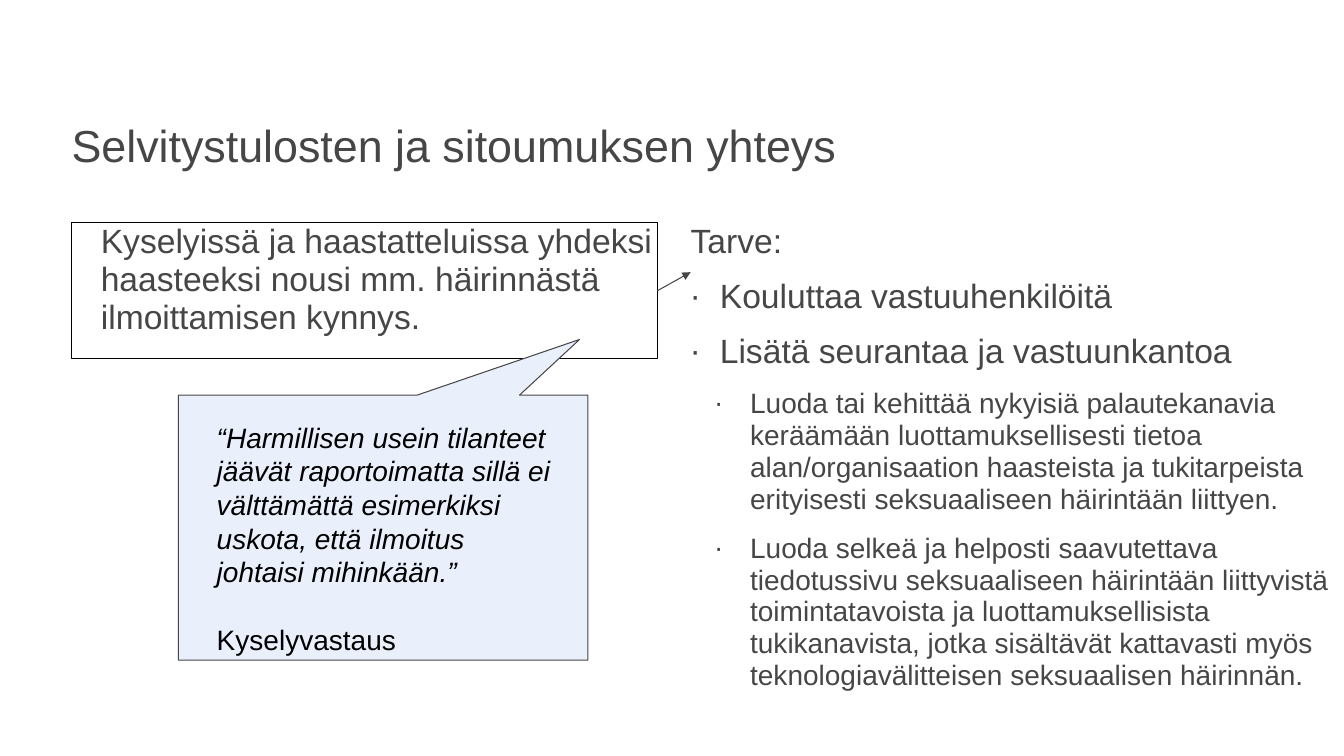
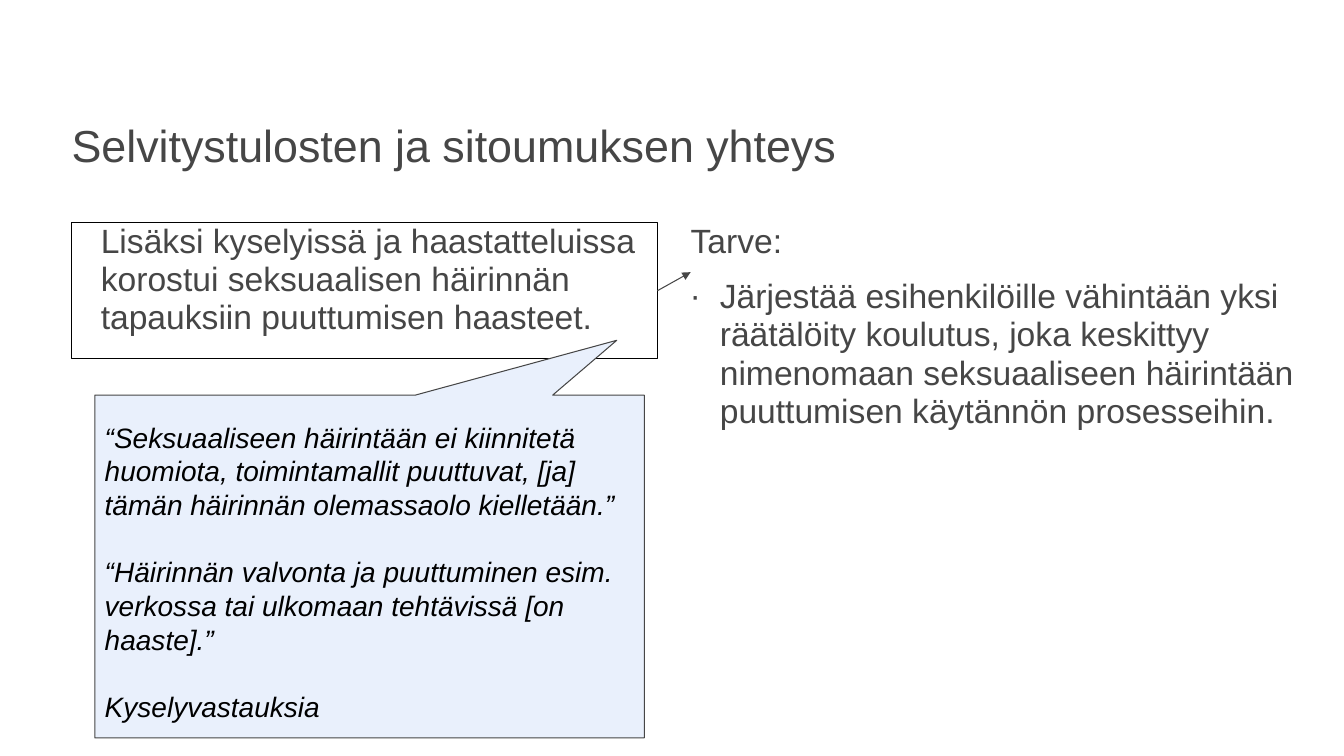
from lxml.etree import SubElement
from pptx import Presentation
from pptx.dml.color import RGBColor
from pptx.enum.shapes import MSO_CONNECTOR, MSO_SHAPE
from pptx.enum.text import MSO_ANCHOR, MSO_AUTO_SIZE, PP_ALIGN
from pptx.oxml.ns import qn
from pptx.util import Inches, Pt

FONT = "Arial"
GREY, BLACK, PALE_BLUE = "464646", "000000", "E9F0FC"
TITLE = "Selvitystulosten ja sitoumuksen yhteys"
CONTENT_TOP = 2.21
CALLOUT_TOP = 3.92


def color(hex_code):
    """Turn a hex string into a colour."""
    return RGBColor.from_string(hex_code)


def inches(*lengths):
    """Turn several numbers into lengths in inches."""
    return [Inches(length) for length in lengths]


def set_frame(frame, insets=(0, 0, 0, 0), anchor=MSO_ANCHOR.TOP):
    """Set wrapping, insets (left, top, right, bottom) and anchor."""
    frame.word_wrap = True
    frame.auto_size = MSO_AUTO_SIZE.NONE
    frame.vertical_anchor = anchor
    (frame.margin_left, frame.margin_top,
     frame.margin_right, frame.margin_bottom) = inches(*insets)


def add_bullet(properties):
    """Give paragraph properties a small dot bullet."""
    bullet_color = SubElement(properties, qn("a:buClr"))
    SubElement(bullet_color, qn("a:srgbClr"), val=GREY)
    SubElement(properties, qn("a:buFont"), typeface=FONT)
    SubElement(properties, qn("a:buChar"), char="∙")


def write_paragraph(frame, text, size=24, ink=GREY, italic=False, spacing=1.0,
                    before=0, left=0, hanging=0, level=0, bullet=False):
    """Write text into the empty first paragraph or a new one."""
    first = not frame.text
    paragraph = frame.paragraphs[0] if first else frame.add_paragraph()
    paragraph.alignment = PP_ALIGN.LEFT
    paragraph.level = level
    paragraph.line_spacing = spacing
    paragraph.space_before = Pt(0 if first else before)
    properties = paragraph._p.get_or_add_pPr()
    properties.set("marL", str(Inches(left)))
    properties.set("indent", str(-Inches(hanging)))
    if bullet:
        add_bullet(properties)
    run = paragraph.add_run()
    run.text = text
    run.font.name = FONT
    run.font.size = Pt(size)
    run.font.italic = italic
    run.font.color.rgb = color(ink)


def style_outline(line, ink):
    """Draw a thin line in the given colour."""
    line.color.rgb = color(ink)
    line.width = Pt(0.75)


def add_title(slide):
    """Place and format the shared title."""
    title = slide.shapes.title
    title.left, title.top, title.width, title.height = inches(0.71, 0.53, 10.82, 1.18)
    set_frame(title.text_frame, anchor=MSO_ANCHOR.BOTTOM)
    write_paragraph(title.text_frame, TITLE, size=32, spacing=0.9)


def add_finding(slide, text):
    """Add the outlined box with the survey finding."""
    finding = slide.shapes.add_shape(
        MSO_SHAPE.RECTANGLE, *inches(0.71, CONTENT_TOP, 5.81, 1.35))
    finding.shadow.inherit = False
    finding.fill.background()
    style_outline(finding.line, BLACK)
    set_frame(finding.text_frame)
    write_paragraph(finding.text_frame, text, spacing=0.95, left=0.29)
    return finding


def add_needs(slide, needs):
    """Add the list of needs, given as (level, text) pairs."""
    frame = slide.shapes.add_textbox(*inches(6.85, CONTENT_TOP, 6.34, 4.54)).text_frame
    set_frame(frame)
    write_paragraph(frame, "Tarve:", spacing=0.95)
    level_formats = (dict(size=24, left=0.29, hanging=0.29),
                     dict(size=20, left=0.59, hanging=0.35))
    for level, text in needs:
        write_paragraph(frame, text, spacing=0.95, before=12, level=level,
                        bullet=True, **level_formats[level])


def add_arrow(slide, finding):
    """Point from the finding to the needs."""
    arrow = slide.shapes.add_connector(
        MSO_CONNECTOR.STRAIGHT, *inches(6.52, 2.89, 6.85, 2.7))
    arrow.begin_connect(finding, 3)
    style_outline(arrow.line, GREY)
    SubElement(arrow.line._get_or_add_ln(), qn("a:tailEnd"), type="triangle")
    SubElement(arrow._element.spPr, qn("a:effectLst"))


def add_callout(slide, left, width, height, tip, insets, quotes, source, source_italic):
    """Add the speech callout with quotes and their source."""
    callout = slide.shapes.add_shape(
        MSO_SHAPE.RECTANGULAR_CALLOUT, *inches(left, CALLOUT_TOP, width, height))
    callout.adjustments[0], callout.adjustments[1] = tip
    callout.shadow.inherit = False
    callout.fill.solid()
    callout.fill.fore_color.rgb = color(PALE_BLUE)
    style_outline(callout.line, GREY)
    frame = callout.text_frame
    set_frame(frame, insets)
    for quote in quotes:
        write_paragraph(frame, quote, size=20, ink=BLACK, italic=True, before=24)
    write_paragraph(frame, source, size=20, ink=BLACK, italic=source_italic, before=24)


def add_link_slide(deck, finding_text, needs, callout):
    """Add one slide linking a finding to needs."""
    slide = deck.slides.add_slide(deck.slide_layouts[5])
    add_title(slide)
    finding = add_finding(slide, finding_text)
    add_needs(slide, needs)
    add_arrow(slide, finding)
    add_callout(slide, **callout)


def main():
    """Build and save the deck."""
    deck = Presentation()
    deck.slide_width, deck.slide_height = inches(13.33, 7.5)
    add_link_slide(
        deck,
        "Kyselyissä ja haastatteluissa yhdeksi haasteeksi nousi mm. häirinnästä "
        "ilmoittamisen kynnys.",
        [(0, "Kouluttaa vastuuhenkilöitä"),
         (0, "Lisätä seurantaa ja vastuunkantoa"),
         (1, "Luoda tai kehittää nykyisiä palautekanavia keräämään luottamuksellisesti "
             "tietoa alan/organisaation haasteista ja tukitarpeista erityisesti "
             "seksuaaliseen häirintään liittyen."),
         (1, "Luoda selkeä ja helposti saavutettava tiedotussivu seksuaaliseen "
             "häirintään liittyvistä toimintatavoista ja luottamuksellisista "
             "tukikanavista, jotka sisältävät kattavasti myös teknologiavälitteisen "
             "seksuaalisen häirinnän.")],
        dict(left=1.77, width=4.06, height=2.63, tip=(0.48, -0.71),
             insets=(0.38, 0.25, 0.36, 0),
             quotes=["“Harmillisen usein tilanteet jäävät raportoimatta sillä ei "
                     "välttämättä esimerkiksi uskota, että ilmoitus johtaisi "
                     "mihinkään.”"],
             source="Kyselyvastaus", source_italic=False))
    add_link_slide(
        deck,
        "Lisäksi kyselyissä ja haastatteluissa korostui seksuaalisen häirinnän "
        "tapauksiin puuttumisen haasteet.",
        [(0, "Järjestää esihenkilöille vähintään yksi räätälöity koulutus, joka "
             "keskittyy nimenomaan seksuaaliseen häirintään puuttumisen käytännön "
             "prosesseihin.")],
        dict(left=0.94, width=5.45, height=3.4, tip=(0.45, -0.66),
             insets=(0.1, 0.25, 0.24, 0),
             quotes=["“Seksuaaliseen häirintään ei kiinnitetä huomiota, "
                     "toimintamallit puuttuvat, [ja] tämän häirinnän olemassaolo "
                     "kielletään.”",
                     "“Häirinnän valvonta ja puuttuminen esim. verkossa tai ulkomaan "
                     "tehtävissä [on haaste].”"],
             source="Kyselyvastauksia", source_italic=True))
    deck.save("out.pptx")


if __name__ == "__main__":
    main()
